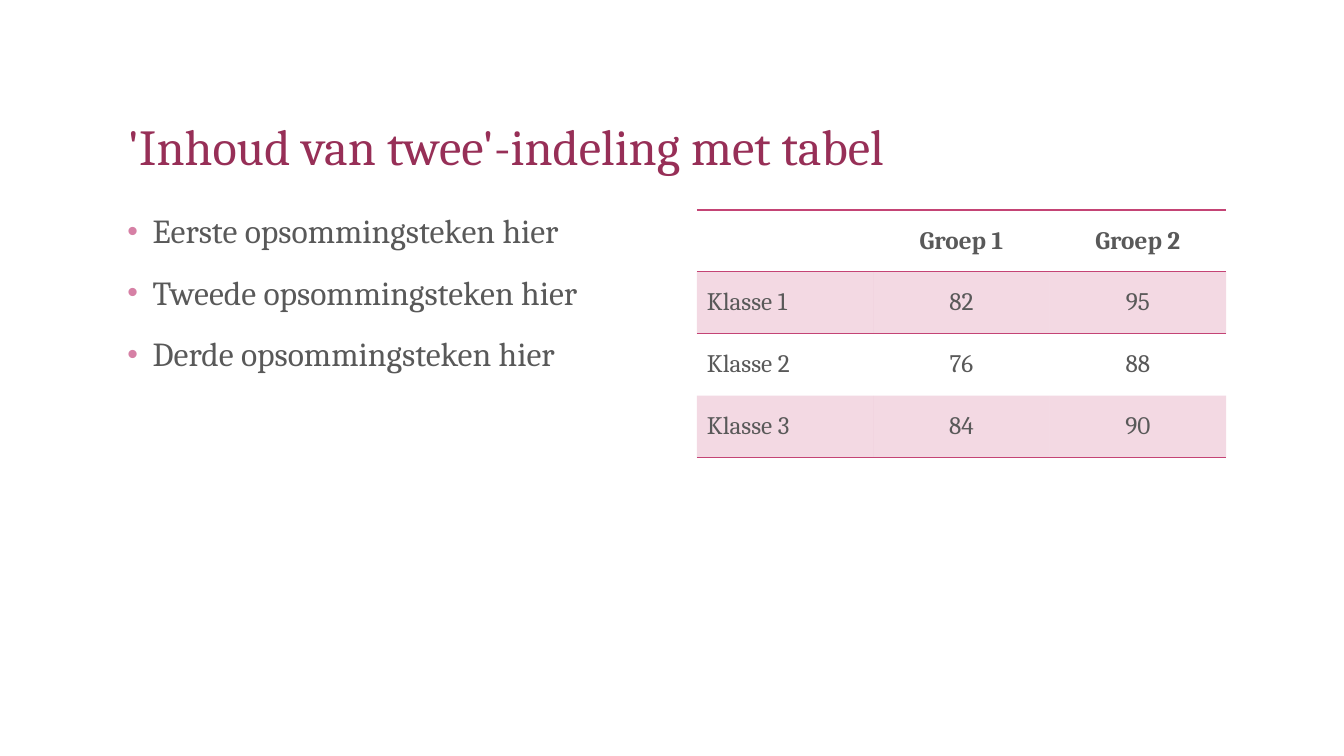
from lxml.etree import SubElement
from pptx import Presentation
from pptx.dml.color import RGBColor
from pptx.enum.text import MSO_ANCHOR, PP_ALIGN
from pptx.oxml.ns import qn
from pptx.util import Cm, Pt

# Content
TITLE = "'Inhoud van twee'-indeling met tabel"
BULLETS = [
    "Eerste opsommingsteken hier",
    "Tweede opsommingsteken hier",
    "Derde opsommingsteken hier",
]
TABLE_ROWS = [
    ("", "Groep 1", "Groep 2"),
    ("Klasse 1", "82", "95"),
    ("Klasse 2", "76", "88"),
    ("Klasse 3", "84", "90"),
]

# Style
FONT = "Cambria"
PLUM = RGBColor(0x97, 0x2F, 0x57)
GRAY = RGBColor(0x59, 0x59, 0x59)
ROSE = RGBColor(0xC4, 0x44, 0x75)
BULLET_PINK = RGBColor(0xD6, 0x80, 0xA5)
PLAIN_TABLE_STYLE = "{2D5ABB26-0587-4C30-8999-92F81FD0307C}"

# Layout
LEFT, CONTENT_TOP = Cm(2.96), Cm(5.29)
CONTENT_WIDTH, COLUMN_WIDTH = Cm(27.94), Cm(13.34)
TABLE_LEFT = LEFT + CONTENT_WIDTH - COLUMN_WIDTH
ROW_HEIGHT = Cm(1.56)
BULLET_INDENT = Cm(0.64)


def write_text(paragraph, text, size=18, color=GRAY, bold=False,
               align=PP_ALIGN.LEFT, line_spacing=None, space_before=None):
    paragraph.alignment = align
    paragraph.line_spacing = line_spacing
    paragraph.space_before = space_before
    paragraph.text = text
    font = paragraph.font
    font.name, font.size, font.bold = FONT, Pt(size), bold
    font.color.rgb = color


def add_text_frame(slide, left, top, width, height, anchor):
    frame = slide.shapes.add_textbox(left, top, width, height).text_frame
    frame.word_wrap = True
    frame.vertical_anchor = anchor
    return frame


def add_bullet(paragraph):
    properties = paragraph._p.get_or_add_pPr()
    properties.set("marL", str(BULLET_INDENT))
    properties.set("indent", str(-BULLET_INDENT))
    color = SubElement(properties, qn("a:buClr"))
    SubElement(color, qn("a:srgbClr"), val=str(BULLET_PINK))
    SubElement(properties, qn("a:buSzPct"), val="90000")
    SubElement(properties, qn("a:buFont"), typeface="Arial")
    SubElement(properties, qn("a:buChar"), char="•")


def add_border(cell, side):
    properties = cell._tc.get_or_add_tcPr()
    line = SubElement(properties, qn(f"a:{side}"), w=str(Pt(1)))
    fill = SubElement(line, qn("a:solidFill"))
    SubElement(fill, qn("a:srgbClr"), val=str(ROSE))


def fill_band(cell):
    cell.fill.solid()
    cell.fill.fore_color.rgb = ROSE
    color = cell._tc.tcPr.find(f".//{qn('a:tcPr')}/{qn('a:solidFill')}/{qn('a:srgbClr')}")
    if color is None:
        color = cell._tc.tcPr.find(f"{qn('a:solidFill')}/{qn('a:srgbClr')}")
    SubElement(color, qn("a:alpha"), val="20000")


def add_title(slide):
    frame = add_text_frame(slide, LEFT, Cm(1.27), CONTENT_WIDTH, Cm(3.3),
                           MSO_ANCHOR.BOTTOM)
    write_text(frame.paragraphs[0], TITLE, size=36, color=PLUM, line_spacing=0.9)


def add_bullet_list(slide):
    frame = add_text_frame(slide, LEFT, CONTENT_TOP, COLUMN_WIDTH, Cm(11.85),
                           MSO_ANCHOR.TOP)
    for index, text in enumerate(BULLETS):
        paragraph = frame.add_paragraph() if index else frame.paragraphs[0]
        add_bullet(paragraph)
        write_text(paragraph, text, size=24, line_spacing=0.9,
                   space_before=Pt(18) if index else None)


def add_score_table(slide):
    row_count, column_count = len(TABLE_ROWS), len(TABLE_ROWS[0])
    table = slide.shapes.add_table(row_count, column_count, TABLE_LEFT, CONTENT_TOP,
                                   COLUMN_WIDTH, ROW_HEIGHT * row_count).table
    table._tbl.tblPr.find(qn("a:tableStyleId")).text = PLAIN_TABLE_STYLE
    table.horz_banding = False
    for row_index, values in enumerate(TABLE_ROWS):
        is_header = row_index == 0
        for column_index, value in enumerate(values):
            cell = table.cell(row_index, column_index)
            cell.vertical_anchor = MSO_ANCHOR.MIDDLE
            write_text(cell.text_frame.paragraphs[0], value, bold=is_header,
                       align=PP_ALIGN.CENTER if column_index else PP_ALIGN.LEFT)
            # Rules around the header and below the last row
            if is_header:
                add_border(cell, "lnT")
            if row_index == 1:
                add_border(cell, "lnT")
            if row_index in (0, row_count - 1):
                add_border(cell, "lnB")
            # Every other row is tinted
            if row_index % 2:
                fill_band(cell)
            else:
                cell.fill.background()


def main():
    presentation = Presentation()
    presentation.slide_width, presentation.slide_height = Cm(33.87), Cm(19.05)
    slide = presentation.slides.add_slide(presentation.slide_layouts[6])
    add_title(slide)
    add_bullet_list(slide)
    add_score_table(slide)
    presentation.save("out.pptx")


if __name__ == "__main__":
    main()
